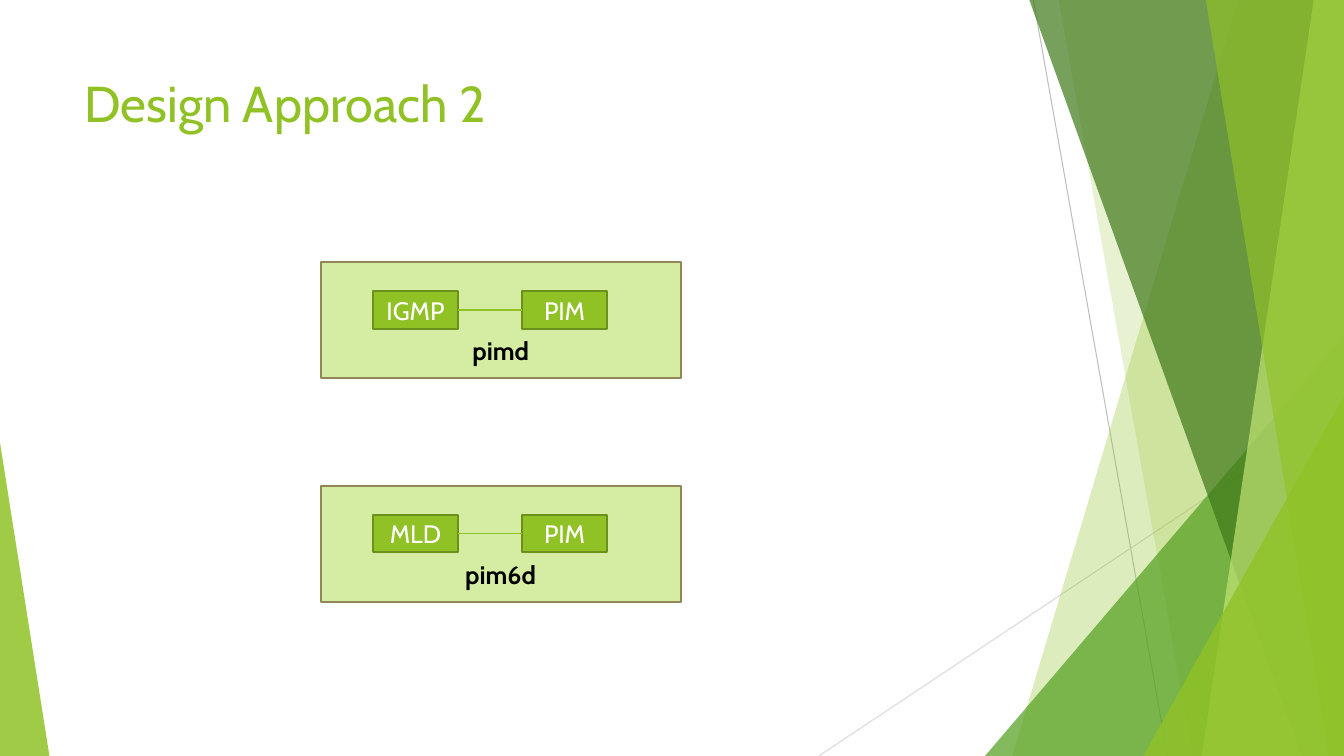
from lxml import etree
from pptx import Presentation
from pptx import util as u
from pptx.dml.color import RGBColor
from pptx.enum import shapes, text
from pptx.oxml.ns import qn

W, H = u.Inches(13.33), u.Inches(7.5)
GREEN, WHITE, BLACK = "90C226", "FFFFFF", "000000"
MODULE = dict(w=6.3, h=4.93, step=11.1, dx=3.9, dy=3.87)
PROCESS = dict(x=23.86, w=26.78, h=15.33)


def px(share):
    """Turn a percentage of the slide width into a length."""
    return u.Emu(round(W * share / 100))


def py(share):
    """Turn a percentage of the slide height into a length."""
    return u.Emu(round(H * share / 100))


def rgb(code):
    """Turn a hex string into a colour."""
    return RGBColor.from_string(code)


def set_all(obj, formats):
    """Set every attribute named in a dict."""
    for name, value in formats.items():
        setattr(obj, name, value)


def paint(sp, fill, alpha=None, line=None):
    """Give a shape its fill, opacity and outline, without shadow."""
    sp.shadow.inherit = False
    sp.fill.solid()
    sp.fill.fore_color.rgb = rgb(fill)
    if alpha:
        clr = sp.fill._xPr.find(qn("a:solidFill"))[0]
        etree.SubElement(clr, qn("a:alpha"), val=str(alpha * 1000))
    if line:
        sp.line.color.rgb = rgb(line)
        sp.line.width = u.Pt(1.5)
    else:
        sp.line.fill.background()


def write(sp, words, color, size=18, bold=False, align=text.PP_ALIGN.CENTER, **frame):
    """Write one formatted paragraph into a shape."""
    tf = sp.text_frame
    set_all(tf, {"word_wrap": True, **frame})
    p = tf.paragraphs[0]
    p.alignment = align
    r = p.add_run()
    r.text = words
    set_all(r.font, {"name": "Cabin", "size": u.Pt(size), "bold": bold})
    r.font.color.rgb = rgb(color)


def add_line(s, x1, y1, x2, y2, color, width):
    """Draw a straight line between two points."""
    c = s.shapes.add_connector(shapes.MSO_CONNECTOR.STRAIGHT, px(x1), py(y1), px(x2), py(y2))
    c.line.color.rgb = rgb(color)
    c.line.width = u.Pt(width)
    etree.SubElement(c._element.spPr, qn("a:effectLst"))


def add_facet(s, top_x, bottom_x, color, alpha):
    """Draw a full-height band from a slanted edge to the right side."""
    fb = s.shapes.build_freeform(px(top_x), 0)
    fb.add_line_segments([(W, 0), (W, H), (px(bottom_x), H)], close=True)
    paint(fb.convert_to_shape(), color, alpha)


def add_corner(s, x, y, w, apex, color, alpha):
    """Draw a triangle standing on the bottom edge of the slide."""
    sp = s.shapes.add_shape(
        shapes.MSO_SHAPE.ISOSCELES_TRIANGLE, px(x), py(y), px(w), py(100 - y))
    sp.adjustments[0] = apex
    paint(sp, color, alpha)


def add_box(s, x, y, w, h, fill, line):
    """Draw an outlined rectangle."""
    sp = s.shapes.add_shape(shapes.MSO_SHAPE.RECTANGLE, px(x), py(y), px(w), py(h))
    paint(sp, fill, line=line)
    return sp


def add_process(s, y, name, modules):
    """Draw a named process holding a row of linked modules."""
    m = MODULE
    sp = add_box(s, PROCESS["x"], y, PROCESS["w"], PROCESS["h"], "D5EDA2", "918655")
    write(sp, name, BLACK, bold=True, margin_bottom=u.Inches(0.12),
          vertical_anchor=text.MSO_ANCHOR.BOTTOM)
    left, top = PROCESS["x"] + m["dx"], y + m["dy"]
    middle = top + m["h"] / 2
    for i, label in enumerate(modules):
        x = left + i * m["step"]
        sp = add_box(s, x, top, m["w"], m["h"], GREEN, "6B901C")
        write(sp, label, WHITE, vertical_anchor=text.MSO_ANCHOR.MIDDLE)
        if i:
            add_line(s, x - m["step"] + m["w"], middle, x, middle, GREEN, 1)


def add_backdrop(s):
    """Draw the faceted decoration from back to front."""
    add_line(s, 76.89, 0, 86.87, 100, "BFBFBF", 0.75)
    add_line(s, 100, 53.73, 60.92, 100, "D9D9D9", 0.75)
    for draw, *values in [
        (add_facet, 92.12, 75.32, GREEN, 30),
        (add_facet, 78.77, 88.75, GREEN, 20),
        (add_corner, 73.29, 44.4, 26.71, 1, "54A021", 72),
        (add_facet, 76.59, 96.85, "3F7819", 70),
        (add_facet, 97.75, 89.42, "C0E474", 70),
        (add_facet, 89.72, 98.87, GREEN, 65),
        (add_corner, 85.07, 52.4, 14.93, 1, GREEN, 80),
        (add_corner, 0, 58.53, 3.68, 0, GREEN, 85),
    ]:
        draw(s, *values)


def main():
    """Build the slide and save it."""
    prs = Presentation()
    set_all(prs, {"slide_width": W, "slide_height": H})
    s = prs.slides.add_slide(prs.slide_layouts[5])
    add_backdrop(s)
    title = s.shapes.title
    set_all(title, {"left": px(5.55), "top": py(8.93), "width": px(70.52), "height": py(19.2)})
    write(title, "Design Approach 2", GREEN, size=36, align=text.PP_ALIGN.LEFT,
          vertical_anchor=text.MSO_ANCHOR.TOP)
    add_process(s, 34.67, "pimd", ["IGMP", "PIM"])
    add_process(s, 64.27, "pim6d", ["MLD", "PIM"])
    prs.save("out.pptx")


if __name__ == "__main__":
    main()
